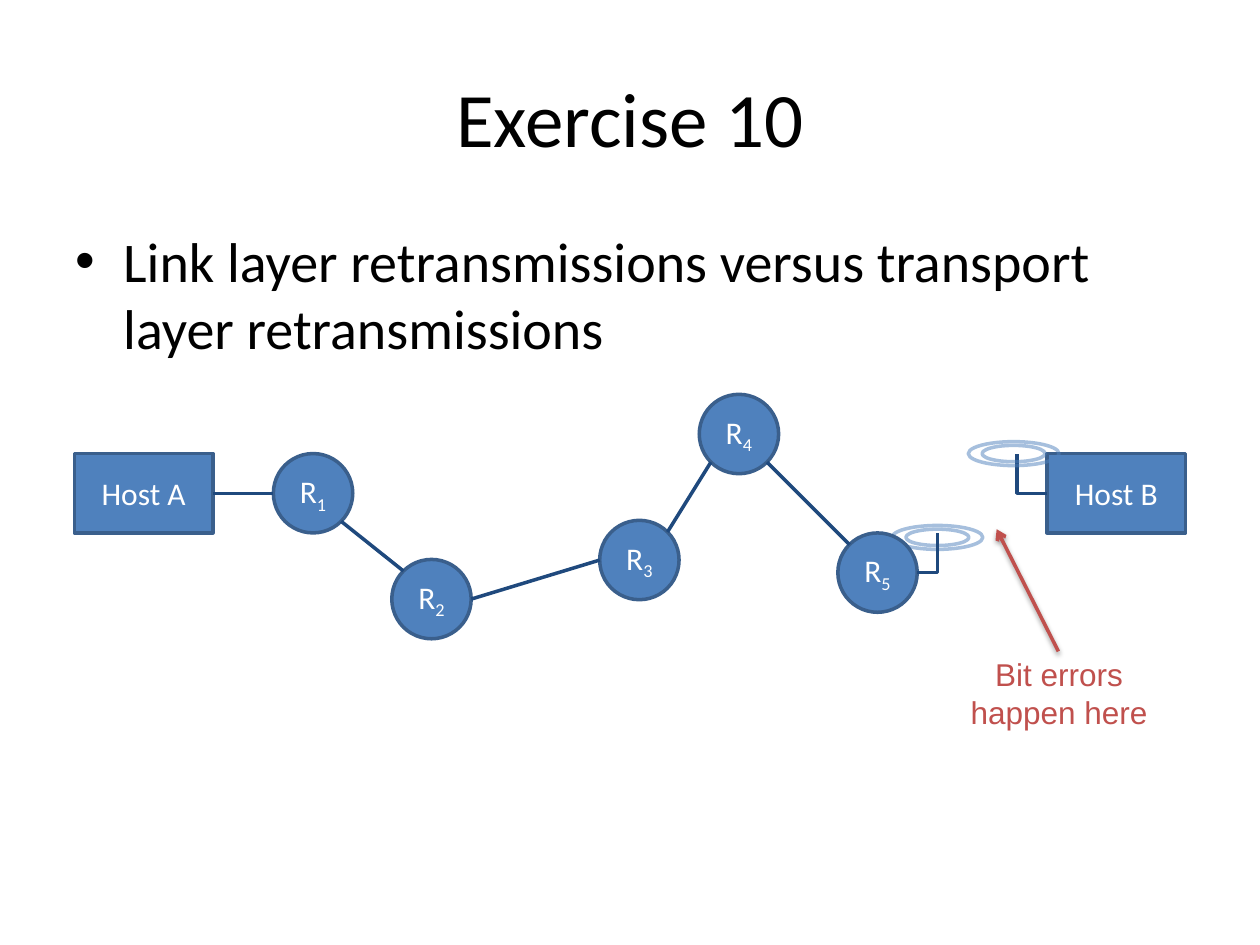
from dataclasses import dataclass
from math import cos, radians, sin

from lxml.etree import SubElement
from pptx import Presentation
from pptx.dml.color import RGBColor
from pptx.enum.shapes import MSO_CONNECTOR as Conn, MSO_SHAPE as Shape
from pptx.enum.text import MSO_ANCHOR as Anchor, PP_ALIGN as Align
from pptx.oxml.ns import qn
from pptx.util import Inches, Pt


@dataclass(frozen=True)
class Theme:
    text: str = "000000"
    inverse: str = "FFFFFF"
    node: str = "4F81BD"
    border: str = "3A5F8C"
    link: str = "1F497D"
    alert: str = "C0504D"
    font: str = "Calibri"
    note_font: str = "Arial"
    title: int = 44
    body: int = 32
    label: int = 18
    line: int = 2


T = Theme()
COLS, ROWS = 100, 75
HOST_W, NODE = 11, 6.3
HOST_Y = 36
ROUTERS = [(24.85, 39.15), (34.25, 47.55), (50.75, 44.45), (58.65, 34.45), (69.65, 45.45)]
LINKS = [(0, 45, 1, 225), (1, 0, 2, 180), (2, -45, 3, 135), (3, 45, 4, 225)]


def grid(*units):
    return [Inches(u * 10 / COLS) for u in units]


def rgb(color):
    return RGBColor.from_string(color)


def add_run(p, text, size, color, font=T.font, baseline=0):
    r = p.add_run()
    r.text = text
    r.font.size, r.font.name = Pt(size), font
    r.font.color.rgb = rgb(color)
    if baseline:
        r._r.get_or_add_rPr().set("baseline", str(baseline * 1000))


def add_text(s, box, text, size, color, font=T.font, align=Align.CENTER, anchor=Anchor.TOP):
    tf = s.shapes.add_textbox(*grid(*box)).text_frame
    tf.word_wrap, tf.vertical_anchor = True, anchor
    p = tf.paragraphs[0]
    p.alignment = align
    add_run(p, text, size, color, font)
    return p


def add_bullet(p, indent):
    p.space_before = Pt(T.body * 0.2)
    pPr = p._p.get_or_add_pPr()
    pPr.set("marL", str(Inches(indent)))
    pPr.set("indent", str(-Inches(indent)))
    SubElement(pPr, qn("a:buFont"), typeface="Arial")
    SubElement(pPr, qn("a:buChar"), char="•")


def add_node(s, kind, box, label, subscript=""):
    sp = s.shapes.add_shape(kind, *grid(*box))
    sp.shadow.inherit = False
    sp.fill.solid()
    sp.fill.fore_color.rgb = rgb(T.node)
    sp.line.color.rgb, sp.line.width = rgb(T.border), Pt(T.line)
    tf = sp.text_frame
    tf.margin_left = tf.margin_right = 0
    tf.vertical_anchor = Anchor.MIDDLE
    p = tf.paragraphs[0]
    p.alignment = Align.CENTER
    add_run(p, label, T.label, T.inverse)
    if subscript:
        add_run(p, subscript, T.label, T.inverse, baseline=-25)
    return sp


def add_antenna(s, cx, cy):
    group = s.shapes.add_group_shape()
    for w, h in ((7.2, 1.9), (5, 1.3)):
        sp = group.shapes.add_shape(Shape.OVAL, *grid(cx - w / 2, cy - h / 2, w, h))
        sp.shadow.inherit = False
        sp.fill.background()
        sp.line.color.rgb, sp.line.width = rgb(T.node), Pt(T.line)
        SubElement(sp.line._ln.find(".//" + qn("a:srgbClr")), qn("a:alpha"), val="50000")


def add_link(s, start, end, kind=Conn.STRAIGHT, color=T.link):
    c = s.shapes.add_connector(kind, *grid(*start, *end))
    c.line.color.rgb, c.line.width = rgb(color), Pt(T.line)
    SubElement(c._element.spPr, qn("a:effectLst"))
    return c


def add_elbow(s, start, end):
    spPr = add_link(s, start, end, Conn.ELBOW)._element.spPr
    spPr.find(qn("a:prstGeom")).set("prst", "bentConnector2")
    xfrm = spPr.find(qn("a:xfrm"))
    if xfrm.get("flipH") and xfrm.get("flipV"):
        del xfrm.attrib["flipH"], xfrm.attrib["flipV"]
        xfrm.set("rot", "10800000")


def add_alert_arrow(s, start, end):
    c = add_link(s, start, end, color=T.alert)
    SubElement(c.line._ln, qn("a:tailEnd"), type="arrow")
    effects = c._element.spPr.find(qn("a:effectLst"))
    shadow = SubElement(effects, qn("a:outerShdw"), blurRad=str(Pt(3.1)),
                        dist=str(Pt(1.6)), dir="5400000", rotWithShape="0")
    black = SubElement(shadow, qn("a:srgbClr"), val=T.text)
    SubElement(black, qn("a:alpha"), val="38000")


def rim(router, angle):
    x, y = ROUTERS[router]
    a = radians(angle)
    return x + NODE / 2 * cos(a), y + NODE / 2 * sin(a)


def main():
    prs = Presentation()
    prs.slide_width, prs.slide_height = grid(COLS, ROWS)
    s = prs.slides.add_slide(prs.slide_layouts[6])

    add_text(s, (5, 3, 90, 12.5), "Exercise 10", T.title, T.text, anchor=Anchor.MIDDLE)
    p = add_text(s, (5, 17.5, 90, 49.5),
                 "Link layer retransmissions versus transport layer retransmissions",
                 T.body, T.text, align=Align.LEFT)
    add_bullet(p, 0.38)

    host_a, _ = [add_node(s, Shape.RECTANGLE, (x, HOST_Y, HOST_W, NODE), label)
                 for x, label in ((5.9, "Host A"), (83.1, "Host B"))]
    add_antenna(s, 74.4, 42.65)
    for i, (x, y) in enumerate(ROUTERS, 1):
        add_node(s, Shape.OVAL, (x - NODE / 2, y - NODE / 2, NODE, NODE), "R", str(i))

    mid = HOST_Y + NODE / 2
    add_link(s, (5.9 + HOST_W, mid), rim(0, 180)).begin_connect(host_a, 3)
    for a, angle_a, b, angle_b in LINKS:
        add_link(s, rim(a, angle_a), rim(b, angle_b))
    add_elbow(s, rim(4, 0), (74.4, 42.3))
    add_elbow(s, (83.1, mid), (80.7, HOST_Y))
    add_antenna(s, 80.45, HOST_Y)

    add_alert_arrow(s, (84, 51.7), (79.1, 42))
    add_text(s, (75, 51.5, 18.1, 7.1), "Bit errors happen here",
             T.label, T.alert, T.note_font)

    prs.save("out.pptx")


if __name__ == "__main__":
    main()
